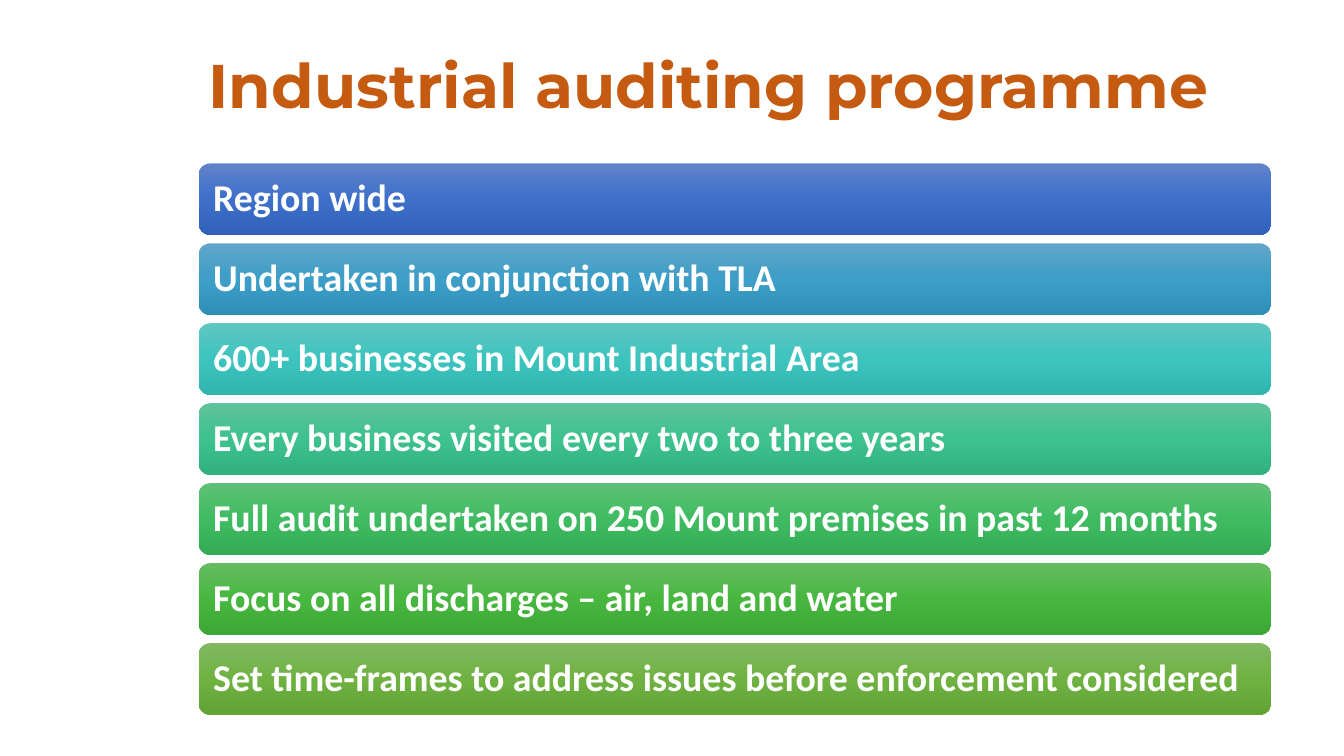
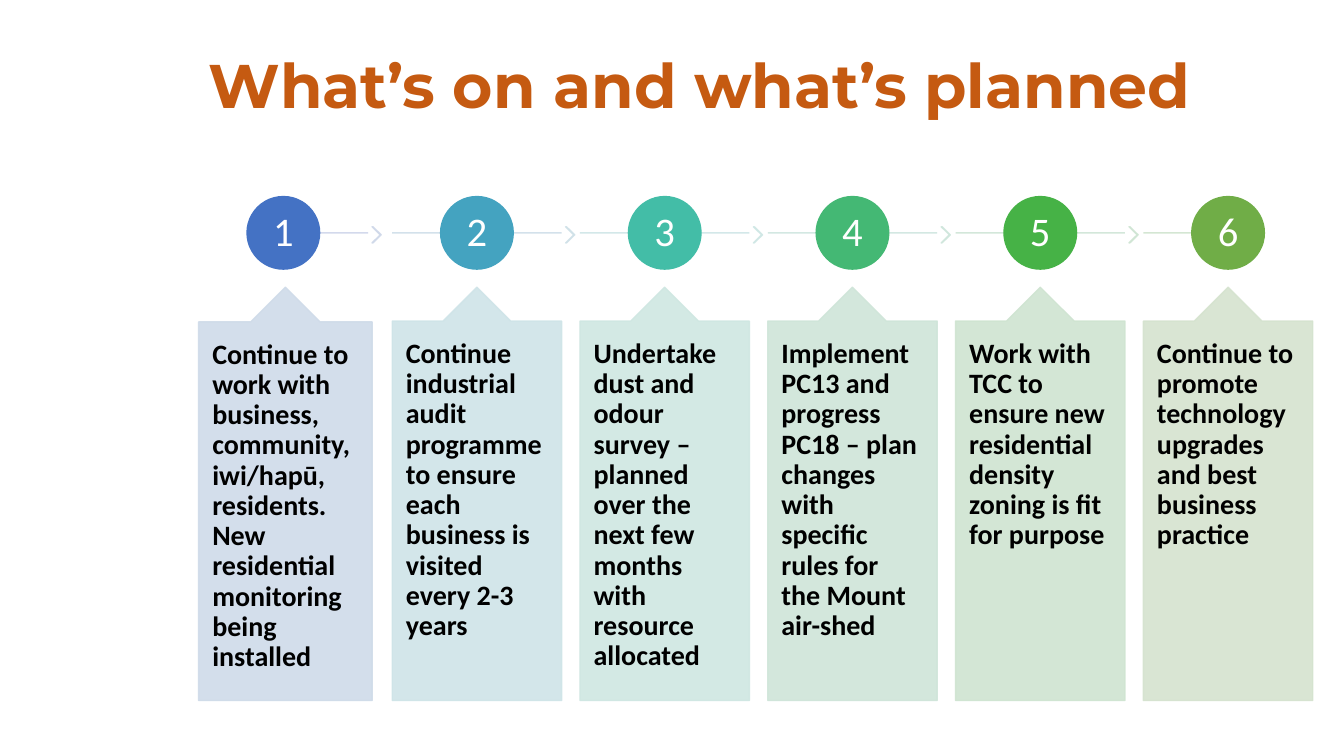
import copy
import dataclasses

import pptx
import pptx.dml.color
import pptx.enum.shapes
import pptx.enum.text
import pptx.oxml
import pptx.oxml.ns
import pptx.util
from lxml import etree

Inches = pptx.util.Inches
Pt = pptx.util.Pt
Shape = pptx.enum.shapes.MSO_SHAPE
Anchor = pptx.enum.text.MSO_ANCHOR
Align = pptx.enum.text.PP_ALIGN
qn = pptx.oxml.ns.qn


@dataclasses.dataclass(frozen=True)
class TextStyle:
    size: float
    color: str
    font: str = "Calibri"
    bold: bool = False


@dataclasses.dataclass(frozen=True)
class Theme:
    title: TextStyle = TextStyle(44, "C55A11", "Montserrat", True)
    bar: TextStyle = TextStyle(27, "FFFFFF", bold=True)
    number: TextStyle = TextStyle(29, "FFFFFF")
    step: TextStyle = TextStyle(20, "000000", bold=True)
    line_spacing: float = 0.9
    line_width: float = 1
    tint_opacity: int = 90
    left: float = 1.97
    content_width: float = 10.64


THEME = Theme()

# Text, then gradient colours from top to bottom
BARS = [
    ("Region wide", ("6183CB", "3E70CA", "3062BB")),
    ("Undertaken in conjunction with TLA", ("61A6C8", "3D9EC7", "308FB8")),
    ("600+ businesses in Mount Industrial Area", ("60C6C1", "3DC4BF", "30B5B0")),
    ("Every business visited every two to three years",
     ("60C39A", "3DC18F", "31B080")),
    ("Full audit undertaken on 250 Mount premises in past 12 months",
     ("60C077", "3FBC62", "33AC55")),
    ("Focus on all discharges – air, land and water",
     ("65BC61", "48B740", "3CA735")),
    ("Set time-frames to address issues before enforcement considered",
     ("81B861", "6FB242", "62A336")),
]

# Text, then colours of the circle, callout, line and chevron
STEPS = [
    ("Continue to work with business, community, iwi/hapū, residents. "
     "New residential monitoring being installed",
     "4472C4", "CFDBE9", "CFD5EA", "CFD8E9"),
    ("Continue industrial audit programme to ensure each business is visited "
     "every 2-3 years",
     "44A3C0", "CFE4E8", "CFDEE9", "CFE1E8"),
    ("Undertake dust and odour survey – planned over the next few months "
     "with resource allocated",
     "43BDA7", "CFE7E2", "CFE6E7", "CFE7E5"),
    ("Implement PC13 and progress PC18 – plan changes with specific rules "
     "for the Mount air-shed",
     "44B874", "CFE5D9", "CFE6DF", "CFE6DC"),
    ("Work with TCC to ensure new residential density zoning is fit for purpose",
     "46B246", "CFE4D1", "CFE5D6", "CFE5D3"),
    ("Continue to promote technology upgrades and best business practice",
     "70AD47", "D5E3CF", "D0E4CF", None),
]


def rgb(color):
    return pptx.dml.color.RGBColor.from_string(color)


def write_text(shape, text, style, anchor, margins, align=Align.LEFT):
    """Write one paragraph; margins are (horizontal, vertical) in inches."""
    frame = shape.text_frame
    frame.word_wrap = True
    frame.auto_size = pptx.enum.text.MSO_AUTO_SIZE.NONE
    frame.vertical_anchor = anchor
    frame.margin_left = frame.margin_right = Inches(margins[0])
    frame.margin_top = frame.margin_bottom = Inches(margins[1])
    paragraph = frame.paragraphs[0]
    paragraph.alignment = align
    paragraph.line_spacing = THEME.line_spacing
    paragraph.space_before = Pt(0)
    run = paragraph.add_run()
    run.text = text
    run.font.name = style.font
    run.font.size = Pt(style.size)
    run.font.bold = style.bold
    run.font.color.rgb = rgb(style.color)


def add_titled_slide(presentation, title):
    slide = presentation.slides.add_slide(presentation.slide_layouts[5])
    shape = slide.shapes.title
    shape.left, shape.top = Inches(THEME.left), Inches(0.4)
    shape.width, shape.height = Inches(THEME.content_width), Inches(0.95)
    write_text(shape, title, THEME.title, Anchor.MIDDLE, (0.1, 0.05))
    return slide


def add_plain_shape(slide, kind, left, top, width, height):
    shape = slide.shapes.add_shape(
        kind, Inches(left), Inches(top), Inches(width), Inches(height))
    shape.shadow.inherit = False
    return shape


def add_filled_shape(slide, kind, left, top, width, height, color):
    shape = add_plain_shape(slide, kind, left, top, width, height)
    shape.fill.solid()
    shape.fill.fore_color.rgb = rgb(color)
    shape.line.color.rgb = rgb(color)
    shape.line.width = Pt(THEME.line_width)
    return shape


def make_translucent(shape):
    for color in shape._element.spPr.iter(qn("a:srgbClr")):
        alpha = etree.SubElement(color, qn("a:alpha"))
        alpha.set("val", str(THEME.tint_opacity * 1000))


def fill_gradient(shape, colors):
    """Spread the colours evenly from top to bottom."""
    shape.fill.gradient()
    shape.fill.gradient_angle = 270
    stop_list = next(shape._element.spPr.iter(qn("a:gsLst")))
    for _ in range(len(colors) - len(stop_list)):
        stop_list.insert(1, copy.deepcopy(stop_list[0]))
    for index, (stop, color) in enumerate(zip(shape.fill.gradient_stops, colors)):
        stop.position = index / (len(colors) - 1)
        stop.color.rgb = rgb(color)


def add_bar(slide, top, text, colors):
    bar = add_plain_shape(slide, Shape.ROUNDED_RECTANGLE,
                          THEME.left, top, THEME.content_width, 0.71)
    fill_gradient(bar, colors)
    bar.line.fill.background()
    write_text(bar, text, THEME.bar, Anchor.MIDDLE, (0.11, 0.11))


def add_line(slide, start, end, y, color):
    line = slide.shapes.add_connector(
        pptx.enum.shapes.MSO_CONNECTOR.STRAIGHT,
        Inches(start), Inches(y), Inches(end), Inches(y))
    line.line.color.rgb = rgb(color)
    line.line.width = Pt(THEME.line_width)
    make_translucent(line)
    etree.SubElement(line._element.spPr, qn("a:effectLst"))


def add_chevron(slide, left, color):
    chevron = add_filled_shape(slide, Shape.CHEVRON, left, 2.25, 0.09, 0.16, color)
    chevron.adjustments[0] = 0.9
    make_translucent(chevron)


def add_number(slide, center, number, color):
    diameter = 0.72
    circle = add_filled_shape(slide, Shape.OVAL, center - diameter / 2, 1.95,
                              diameter, diameter, color)
    write_text(circle, str(number), THEME.number, Anchor.MIDDLE, (0.03, 0.03),
               Align.CENTER)


def add_callout(slide, left, width, text, color):
    callout = add_filled_shape(slide, Shape.UP_ARROW_CALLOUT,
                               left, 2.85, width, 4.1, color)
    for index, value in enumerate((0.5, 0.2, 0.2, 1)):
        callout.adjustments[index] = value
    make_translucent(callout)
    write_text(callout, text, THEME.step, Anchor.TOP, (0.135, 0.18))


def build_audit_slide(presentation):
    slide = add_titled_slide(presentation, "Industrial auditing programme")
    first_top, last_top = 1.62, 6.38
    pitch = (last_top - first_top) / (len(BARS) - 1)
    for index, (text, colors) in enumerate(BARS):
        add_bar(slide, first_top + index * pitch, text, colors)


def build_plan_slide(presentation):
    slide = add_titled_slide(presentation, "What’s on and what’s planned")
    second_left, last_left = 3.89, 11.34
    pitch = (last_left - second_left) / (len(STEPS) - 2)
    for index, step in enumerate(STEPS):
        text, circle_color, callout_color, line_color, chevron_color = step
        is_first, is_last = index == 0, index == len(STEPS) - 1
        left = THEME.left if is_first else second_left + (index - 1) * pitch
        width = 1.72 if is_first else 1.68
        center = 2.81 if is_first else left + width / 2
        line_end = center if is_last else center + 0.84
        add_line(slide, center if is_first else left, line_end, 2.31, line_color)
        if not is_last:
            add_chevron(slide, line_end + 0.04, chevron_color)
        add_number(slide, center, index + 1, circle_color)
        add_callout(slide, left, width, text, callout_color)


def main():
    presentation = pptx.Presentation()
    presentation.slide_width = Inches(13.33)
    presentation.slide_height = Inches(7.5)
    build_audit_slide(presentation)
    build_plan_slide(presentation)
    presentation.save("out.pptx")


if __name__ == "__main__":
    main()
